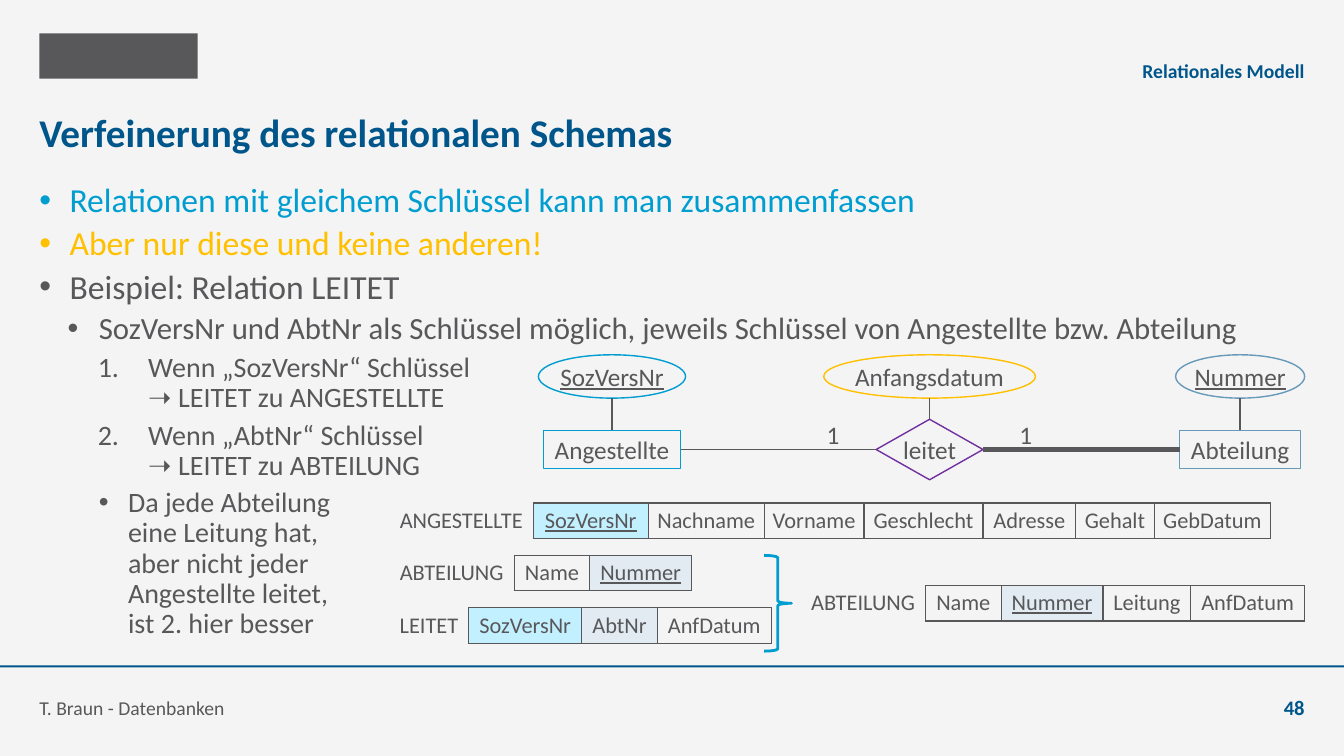
"""Build the slide on refining a relational schema."""
from lxml import etree
from pptx import Presentation, util as u
from pptx.dml.color import RGBColor
from pptx.enum import shapes, text
from pptx.oxml.ns import qn

PX = 9144
THEME = {
    "font": "Calibri",
    "paper": "F4F4F4", "ink": "58585A", "navy": "00568A", "cyan": "009DD1",
    "yellow": "FFC000", "violet": "7030A0", "steel": "679AB9",
    "cyan_tint": "C3F0FF", "steel_tint": "E1EBF1",
    "title": 28, "levels": (24, 22, 20), "diagram": 18, "cell": 16,
    "footer": 14, "number": 14.7,
}


def rgb(name):
    return RGBColor.from_string(THEME[name])


def set_text(tf, value, size, color="ink", bold=False, underline=False,
             align=text.PP_ALIGN.LEFT, anchor=text.MSO_ANCHOR.MIDDLE, wrap=True):
    tf.text = value
    tf.word_wrap = wrap
    tf.vertical_anchor = anchor
    tf.margin_left = tf.margin_right = tf.margin_top = tf.margin_bottom = 0
    p = tf.paragraphs[0]
    p.alignment = align
    for r in p.runs:
        r.font.name, r.font.size = THEME["font"], u.Pt(size)
        r.font.bold, r.font.underline = bold, underline
        r.font.color.rgb = rgb(color)


prs = Presentation()
prs.slide_width, prs.slide_height = 1333 * PX, 750 * PX
s = prs.slides.add_slide(prs.slide_layouts[1])
s.background.fill.solid()
s.background.fill.fore_color.rgb = rgb("paper")

for x, y, w, h, color in [(39, 33, 157, 45, "ink"), (0, 660, 1333, 2, "navy")]:
    sp = s.shapes.add_shape(shapes.MSO_SHAPE.RECTANGLE, x * PX, y * PX, w * PX, h * PX)
    sp.shadow.inherit = False
    sp.fill.solid()
    sp.fill.fore_color.rgb = rgb(color)
    sp.line.fill.background()

title, body = s.placeholders
for sp, y, h in [(title, 99, 63), (body, 182, 464)]:
    sp.left, sp.top, sp.width, sp.height = 39 * PX, y * PX, 1255 * PX, h * PX
    sp.text_frame.auto_size = text.MSO_AUTO_SIZE.NONE
set_text(title.text_frame, "Verfeinerung des relationalen Schemas", THEME["title"], "navy", True)

tf = body.text_frame
tf.margin_left = tf.margin_right = tf.margin_top = tf.margin_bottom = 0
points = [
    ("Relationen mit gleichem Schlüssel kann man zusammenfassen", 0, 30, -30, "cyan", False),
    ("Aber nur diese und keine anderen!", 0, 30, -30, "yellow", False),
    ("Beispiel: Relation LEITET", 0, 30, -30, "ink", False),
    ("SozVersNr und AbtNr als Schlüssel möglich, jeweils Schlüssel von Angestellte bzw. Abteilung",
     1, 59, -31, "ink", False),
    ("Wenn „SozVersNr“ Schlüssel\v➝ LEITET zu ANGESTELLTE", 2, 108, -50, "ink", True),
    ("Wenn „AbtNr“ Schlüssel\v➝ LEITET zu ABTEILUNG", 2, 108, -50, "ink", True),
    ("Da jede Abteilung\veine Leitung hat,\vaber nicht jeder\vAngestellte leitet,\vist 2. hier besser",
     2, 88, -29, "ink", False),
]
for i, (value, level, margin, indent, color, numbered) in enumerate(points):
    p = tf.add_paragraph() if i else tf.paragraphs[0]
    p.text = value
    p.level = level
    p.line_spacing, p.space_before, p.space_after = 0.9, u.Pt(5), u.Pt(0)
    for r in p.runs:
        r.font.name, r.font.size = THEME["font"], u.Pt(THEME["levels"][level])
        r.font.color.rgb = rgb(color)
    pPr = p._p.get_or_add_pPr()
    pPr.set("marL", str(margin * PX))
    pPr.set("indent", str(indent * PX))
    if numbered:
        etree.SubElement(pPr, qn("a:buFont"), typeface="+mj-lt")
        etree.SubElement(pPr, qn("a:buAutoNum"), type="arabicPeriod")
    else:
        etree.SubElement(pPr, qn("a:buFont"), typeface="Arial")
        etree.SubElement(pPr, qn("a:buChar"), char="•")

labels = [
    ("Relationales Modell", 393, 43, 901, "footer", "navy", True, text.PP_ALIGN.RIGHT),
    ("T. Braun - Datenbanken", 39, 675, 920, "footer", "ink", False, text.PP_ALIGN.LEFT),
    ("48", 1215, 675, 79, "number", "navy", True, text.PP_ALIGN.RIGHT),
]
for value, x, y, w, size, color, bold, align in labels:
    sp = s.shapes.add_textbox(x * PX, y * PX, w * PX, 39 * PX)
    set_text(sp.text_frame, value, THEME[size], color, bold,
             align=align, anchor=text.MSO_ANCHOR.BOTTOM)

KEY = {"SozVersNr": "cyan_tint", "AbtNr": "steel_tint", "Nummer": "steel_tint"}
relations = [
    (386, 499, "ANGESTELLTE", 143, True,
     [("SozVersNr", 114), ("Nachname", 115), ("Vorname", 99), ("Geschlecht", 118),
      ("Adresse", 92), ("Gehalt", 78), ("GebDatum", 115)]),
    (386, 551, "ABTEILUNG", 124, True, [("Name", 75), ("Nummer", 101)]),
    (386, 603, "LEITET", 79, False, [("SozVersNr", 112), ("AbtNr", 75), ("AnfDatum", 113)]),
    (794, 581, "ABTEILUNG", 124, True,
     [("Name", 75), ("Nummer", 101), ("Leitung", 87), ("AnfDatum", 113)]),
]
for x, y, name, name_width, underlined, attributes in relations:
    columns = [(name, name_width)] + attributes
    total = sum(w for _, w in columns)
    table = s.shapes.add_table(1, len(columns), x * PX, y * PX, total * PX, 35 * PX).table
    table.first_row = table.horz_banding = False
    for i, (value, w) in enumerate(columns):
        table.columns[i].width = w * PX
        cell = table.cell(0, i)
        set_text(cell.text_frame, value, THEME["cell"], align=text.PP_ALIGN.CENTER,
                 underline=underlined and value in KEY)
        cell.vertical_anchor = text.MSO_ANCHOR.TOP
        cell.margin_left = cell.margin_right = 8 * PX
        cell.margin_top = cell.margin_bottom = 4 * PX
        tcPr = cell._tc.get_or_add_tcPr()
        for side in ("lnL", "lnR", "lnT", "lnB"):
            ln = etree.SubElement(tcPr, qn(f"a:{side}"), w=str(u.Pt(1)))
            if i or side == "lnR":
                fill = etree.SubElement(ln, qn("a:solidFill"))
                etree.SubElement(fill, qn("a:srgbClr"), val=THEME["ink"])
            else:
                etree.SubElement(ln, qn("a:noFill"))
        if value in KEY:
            cell.fill.solid()
            cell.fill.fore_color.rgb = rgb(KEY[value])
        else:
            cell.fill.background()

brace = s.shapes.add_shape(shapes.MSO_SHAPE.RIGHT_BRACE, 758 * PX, 551 * PX, 27 * PX, 95 * PX)
brace.shadow.inherit = False
brace.fill.background()
brace.line.color.rgb, brace.line.width = rgb("cyan"), u.Pt(2)

RECT, OVAL, DIAMOND = (shapes.MSO_SHAPE.RECTANGLE, shapes.MSO_SHAPE.OVAL, shapes.MSO_SHAPE.DIAMOND)
nodes = [
    ("Angestellte", RECT, 607, 446, 136, 38, "cyan"),
    ("leitet", DIAMOND, 922, 446, 106, 60, "violet"),
    ("Abteilung", RECT, 1230, 446, 120, 38, "steel"),
    ("SozVersNr", OVAL, 607, 373, 146, 43, "cyan"),
    ("Anfangsdatum", OVAL, 922, 373, 210, 43, "yellow"),
    ("Nummer", OVAL, 1230, 373, 128, 43, "steel"),
]
node = {}
for value, kind, cx, cy, w, h, color in nodes:
    sp = s.shapes.add_shape(kind, (cx - w // 2) * PX, (cy - h // 2) * PX, w * PX, h * PX)
    sp.shadow.inherit = False
    sp.fill.solid()
    sp.fill.fore_color.rgb = rgb("paper")
    sp.line.color.rgb, sp.line.width = rgb(color), u.Pt(1)
    set_text(sp.text_frame, value, THEME["diagram"], underline=value in KEY,
             align=text.PP_ALIGN.CENTER, wrap=False)
    node[value] = sp

edges = [
    ("Angestellte", 3, "leitet", 1, 1),
    ("leitet", 3, "Abteilung", 1, 3),
    ("Angestellte", 0, "SozVersNr", None, 1),
    ("leitet", 0, "Anfangsdatum", None, 1),
    ("Abteilung", 0, "Nummer", None, 1),
]
for start, start_site, end, end_site, weight in edges:
    target = node[end]
    line = s.shapes.add_connector(shapes.MSO_CONNECTOR.STRAIGHT, 0, 0,
                                  target.left + target.width // 2, target.top + target.height)
    line.begin_connect(node[start], start_site)
    if end_site is not None:
        line.end_connect(target, end_site)
    line.line.color.rgb, line.line.width = rgb("ink"), u.Pt(weight)
    etree.SubElement(line._element.spPr, qn("a:effectLst"))

for x in (820, 1011):
    sp = s.shapes.add_textbox(x * PX, 416 * PX, 13 * PX, 30 * PX)
    set_text(sp.text_frame, "1", THEME["diagram"], wrap=False)

prs.save("out.pptx")
